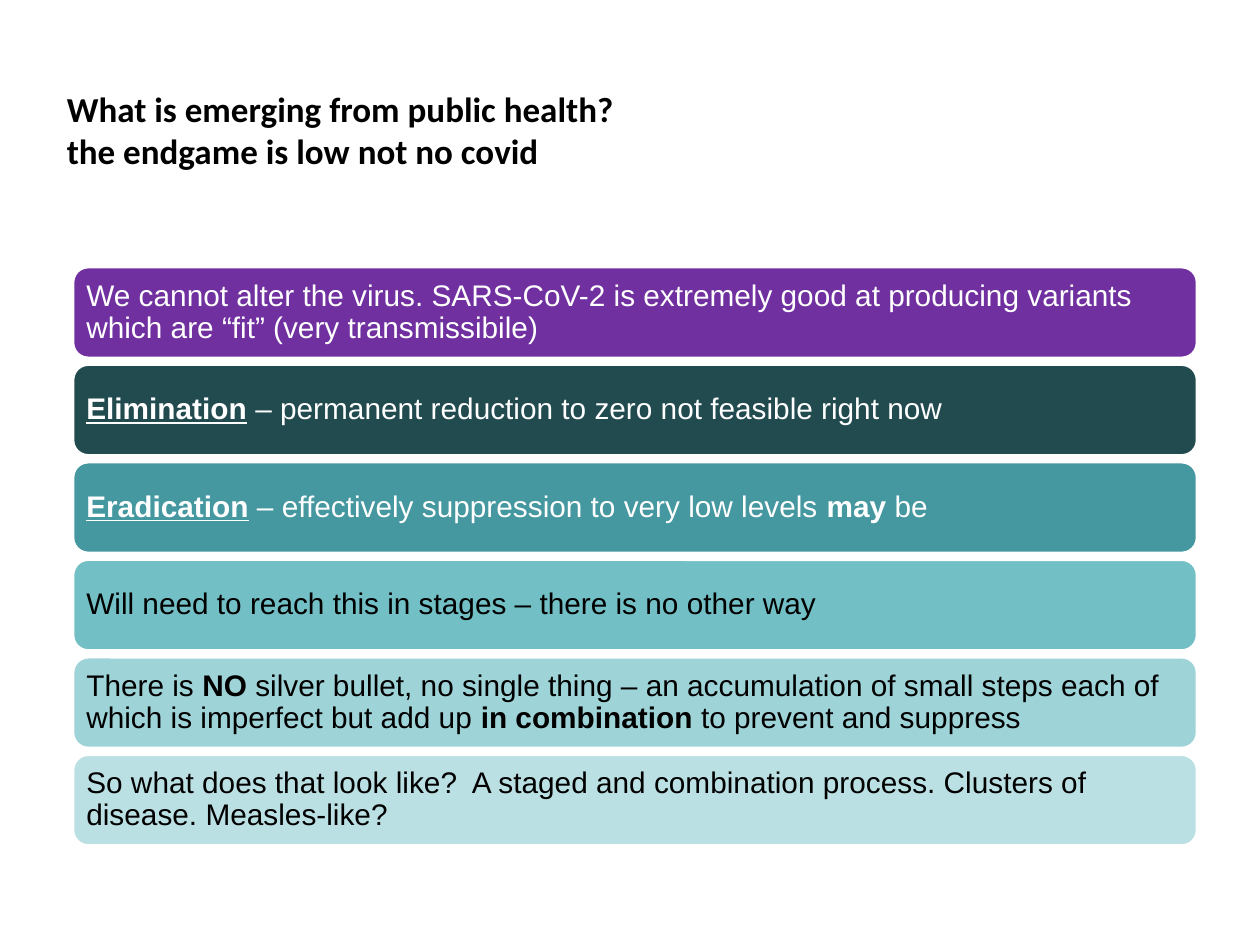
from pptx import Presentation
from pptx.dml.color import RGBColor
from pptx.enum.shapes import MSO_SHAPE
from pptx.enum.text import MSO_ANCHOR, MSO_AUTO_SIZE, PP_ALIGN
from pptx.util import Inches, Pt

ROUNDED = MSO_SHAPE.ROUNDED_RECTANGLE
MIDDLE = MSO_ANCHOR.MIDDLE
LEFT = PP_ALIGN.LEFT
NO_FIT = MSO_AUTO_SIZE.NONE

COLOURS = {
    "white": "FFFFFF",
    "black": "000000",
    "purple": "7030A0",
    "deep teal": "224B50",
    "teal": "4597A0",
    "mid teal": "72BFC5",
    "light teal": "9ED3D7",
    "pale teal": "BBE0E3",
}

TITLE = "What is emerging from public health?\vthe endgame is low not no covid"

# Fill, text colour, then spans of (text, style): "b" is bold, "u" is underlined.
MESSAGES = [
    ("purple", "white", [
        ("We cannot alter the virus. SARS-CoV-2 is extremely good at producing "
         "variants which are “fit” (very transmissibile)", "")]),
    ("deep teal", "white", [
        ("Elimination", "bu"),
        (" – permanent reduction to zero not feasible right now", "")]),
    ("teal", "white", [
        ("Eradication", "bu"),
        (" – effectively suppression to very low levels ", ""),
        ("may ", "b"),
        ("be", "")]),
    ("mid teal", "black", [
        ("Will need to reach this in stages – there is no other way", "")]),
    ("light teal", "black", [
        ("There is ", ""),
        ("NO", "b"),
        (" silver bullet, no single thing – an accumulation of small steps "
         "each of which is imperfect but add up ", ""),
        ("in combination ", "b"),
        ("to prevent and suppress", "")]),
    ("pale teal", "black", [
        ("So what does that look like?  A staged and combination process. "
         "Clusters of disease. Measles-like?", "")]),
]


def colour(name):
    return RGBColor.from_string(COLOURS[name])


def set_font(para, name, size, colour_name):
    para.font.name = name
    para.font.size = Pt(size)
    para.font.color.rgb = colour(colour_name)


def place_title(page, left, top, width, height):
    title = page.shapes.title
    title.left, title.top, title.width, title.height = left, top, width, height
    frame = title.text_frame
    frame.text = TITLE
    frame.auto_size = NO_FIT
    frame.vertical_anchor = MIDDLE
    para = frame.paragraphs[0]
    para.alignment = LEFT
    set_font(para, "Calibri", 20, "black")
    para.font.bold = True


def add_bar(page, left, top, width, height, message):
    fill, text_colour, spans = message
    bar = page.shapes.add_shape(ROUNDED, left, top, width, height)
    bar.shadow.inherit = False
    bar.fill.solid()
    bar.fill.fore_color.rgb = colour(fill)
    bar.line.color.rgb = colour("white")
    bar.line.width = Pt(1.5)

    frame = bar.text_frame
    frame.word_wrap = True
    frame.vertical_anchor = MIDDLE
    frame.margin_left = frame.margin_right = Inches(0.07)
    frame.margin_top = frame.margin_bottom = Inches(0.07)
    para = frame.paragraphs[0]
    para.alignment = LEFT
    para.line_spacing = 0.9
    set_font(para, "Arial", 17, text_colour)
    for text, style in spans:
        span = para.add_run()
        span.text = text
        if "b" in style:
            span.font.bold = True
        if "u" in style:
            span.font.underline = True


def add_message_stack(page, left, top, width, height):
    """Fill the box with equal bars, one for each message, at equal gaps."""
    bar_height = Inches(0.72)
    pitch = (height - bar_height) / (len(MESSAGES) - 1)
    for index, message in enumerate(MESSAGES):
        add_bar(page, left, round(top + index * pitch), width, bar_height, message)


def main():
    deck = Presentation()
    deck.slide_width, deck.slide_height = Inches(10), Inches(7.5)
    page = deck.slides.add_slide(deck.slide_layouts.get_by_name("Title Only"))
    place_title(page, Inches(0.43), Inches(0.36), Inches(7.34), Inches(1.34))
    add_message_stack(page, Inches(0.58), Inches(2.12), Inches(8.92), Inches(4.59))
    deck.save("out.pptx")


if __name__ == "__main__":
    main()
